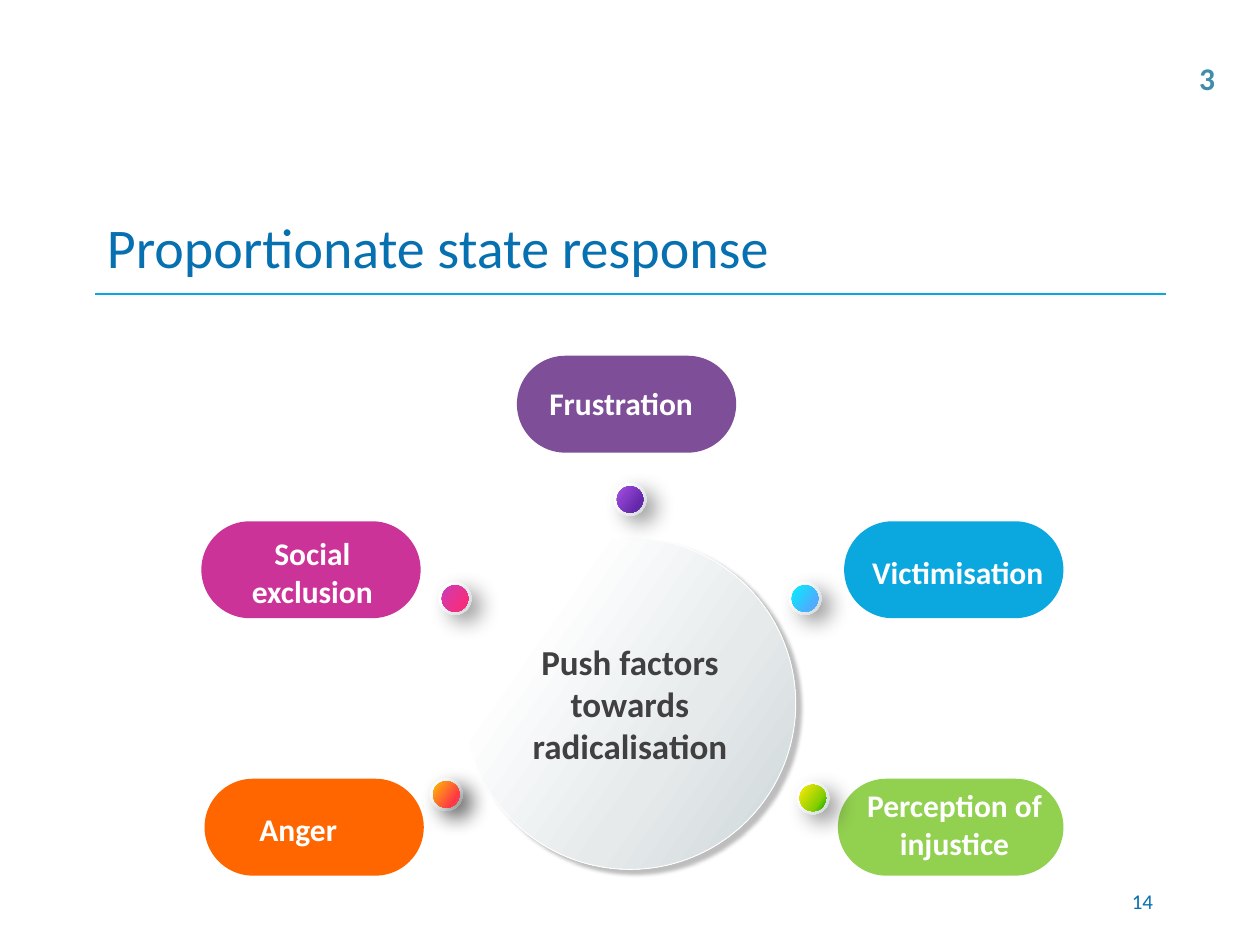
"""Build the slide on push factors towards radicalisation."""
from dataclasses import dataclass
from typing import Optional

import lxml.etree
import pptx
import pptx.dml.color
import pptx.enum.shapes
import pptx.enum.text
import pptx.oxml.ns
import pptx.util

Pt = pptx.util.Pt
RGBColor = pptx.dml.color.RGBColor
Align = pptx.enum.text.PP_ALIGN
Anchor = pptx.enum.text.MSO_ANCHOR
Preset = pptx.enum.shapes.MSO_SHAPE
qn = pptx.oxml.ns.qn

WHITE = RGBColor(0xFF, 0xFF, 0xFF)
BLUE = RGBColor(0x07, 0x70, 0xB1)
CYAN = RGBColor(0x0B, 0xA7, 0xDF)
TEAL = RGBColor(0x3E, 0x8E, 0xA9)
CHARCOAL = RGBColor(0x40, 0x40, 0x40)
ORANGE = RGBColor(0xFF, 0x66, 0x00)
MAGENTA = RGBColor(0xCC, 0x33, 0x99)
PURPLE = RGBColor(0x7E, 0x4E, 0x99)
GREEN = RGBColor(0x92, 0xD0, 0x50)

FONT = "Calibri"
ANGLE = 35
PILL_HEIGHT = 55.4
HALO_SIZE = 18.8
CORE_SIZE = 15.1
LABEL_INSETS = (2.9, 2.9)

Box = tuple[float, float, float, float]
Stops = list[tuple[int, RGBColor]]


@dataclass
class Shadow:
    opacity: int
    blur: float
    distance: float
    angle: int = 39


@dataclass
class Factor:
    label: str
    color: RGBColor
    pill: tuple[float, float, float]
    text_box: Box
    alignment: Align
    dot_center: tuple[float, float]
    dot_stops: Stops
    core_shadow: Optional[Shadow] = None


SILVER: Stops = [(23, WHITE), (63, RGBColor(0xE6, 0xEA, 0xEB)), (100, RGBColor(0xCD, 0xD5, 0xD8))]
DOT_SHADOW = Shadow(38, 12, 7.1)
HUB_SHADOW = Shadow(26, 2, 3.7)

FACTORS = [
    Factor("Anger", ORANGE, (116.9, 445, 125.3), (145.4, 460, 66, 27.4), Align.LEFT, (255, 454),
           [(0, RGBColor(0xFF, 0xC2, 0x03)), (37, RGBColor(0xFF, 0x7D, 0x25)),
            (77, RGBColor(0xFF, 0x38, 0x47))], DOT_SHADOW),
    Factor("Social exclusion", MAGENTA, (115.1, 297.9, 125.3), (120.2, 302.4, 116.6, 49), Align.CENTER,
           (260, 342),
           [(1, RGBColor(0xC2, 0x3F, 0xC6)), (36, RGBColor(0xE1, 0x35, 0x9B)),
            (98, RGBColor(0xFF, 0x2A, 0x70))]),
    Factor("Frustration", PURPLE, (295.4, 203.3, 125.3), (311, 216.7, 97.2, 27.4), Align.LEFT, (360, 285.4),
           [(0, RGBColor(0xA8, 0x52, 0xE6)), (37, RGBColor(0x86, 0x3D, 0xC8)),
            (77, RGBColor(0x64, 0x28, 0xAA))]),
    Factor("Victimisation", CYAN, (482.4, 297.9, 125.3), (495.4, 313.2, 107.3, 27.4), Align.LEFT, (460, 342),
           [(0, RGBColor(0x00, 0xF2, 0xFE)), (37, RGBColor(0x28, 0xCF, 0xFE)),
            (77, RGBColor(0x4F, 0xAC, 0xFE))]),
    Factor("Perception of injustice", GREEN, (478.8, 445, 128.9), (491.8, 446.4, 107.3, 49), Align.CENTER,
           (464.5, 456),
           [(0, RGBColor(0xFF, 0xEA, 0x03)), (71, RGBColor(0x85, 0xCE, 0x02)),
            (98, RGBColor(0x0C, 0xB1, 0x00))]),
]


def add_color(parent, color: RGBColor):
    return lxml.etree.SubElement(parent, qn("a:srgbClr"), val=str(color))


def add_gradient(shape, stops: Stops) -> None:
    properties = shape.element.spPr
    gradient = properties.makeelement(qn("a:gradFill"), {"rotWithShape": "1"})
    stop_list = lxml.etree.SubElement(gradient, qn("a:gsLst"))
    for position, color in stops:
        add_color(lxml.etree.SubElement(stop_list, qn("a:gs"), pos=str(position * 1000)), color)
    lxml.etree.SubElement(gradient, qn("a:lin"), ang=str(ANGLE * 60000), scaled="0")
    properties.find(qn("a:prstGeom")).addnext(gradient)


def add_shadow(shape, shadow: Shadow) -> None:
    effects = shape.element.spPr.find(qn("a:effectLst"))
    outer = lxml.etree.SubElement(
        effects, qn("a:outerShdw"), blurRad=str(Pt(shadow.blur)), dist=str(Pt(shadow.distance)),
        dir=str(shadow.angle * 60000), algn="tl", rotWithShape="0")
    color = add_color(outer, RGBColor(0, 0, 0))
    lxml.etree.SubElement(color, qn("a:alpha"), val=str(shadow.opacity * 1000))


def add_circle(slide, center: tuple[float, float], size: float, stops: Stops, shadow: Optional[Shadow]):
    x, y = center
    shape = slide.shapes.add_shape(Preset.OVAL, Pt(x - size / 2), Pt(y - size / 2), Pt(size), Pt(size))
    shape.shadow.inherit = False
    shape.line.fill.background()
    add_gradient(shape, stops)
    if shadow:
        add_shadow(shape, shadow)
    return shape


def add_pill(slide, factor: Factor) -> None:
    left, top, width = factor.pill
    shape = slide.shapes.add_shape(Preset.ROUNDED_RECTANGLE, Pt(left), Pt(top), Pt(width), Pt(PILL_HEIGHT))
    shape.adjustments[0] = 0.5
    shape.shadow.inherit = False
    shape.fill.solid()
    shape.fill.fore_color.rgb = factor.color
    shape.line.fill.background()


def write_text(shape, text: str, size: float, color: RGBColor, bold: bool = False,
               alignment: Align = Align.LEFT, anchor: Anchor = Anchor.TOP,
               insets: tuple[float, float] = (7.2, 3.6), wrap: bool = True) -> None:
    frame = shape.text_frame
    frame.word_wrap = wrap
    frame.vertical_anchor = anchor
    frame.margin_left = frame.margin_right = Pt(insets[0])
    frame.margin_top = frame.margin_bottom = Pt(insets[1])
    paragraph = frame.paragraphs[0]
    paragraph.text = text
    paragraph.alignment = alignment
    paragraph.font.name = FONT
    paragraph.font.size = Pt(size)
    paragraph.font.bold = bold
    paragraph.font.color.rgb = color


def add_text_box(slide, box: Box):
    return slide.shapes.add_textbox(*(Pt(length) for length in box))


def add_title_rule(slide) -> None:
    rule = slide.shapes.add_connector(
        pptx.enum.shapes.MSO_CONNECTOR.STRAIGHT, Pt(54), Pt(168), Pt(666), Pt(168))
    rule.line.color.rgb = CYAN
    rule.line.width = Pt(0.75)
    lxml.etree.SubElement(rule.element.spPr, qn("a:effectLst"))


def main() -> None:
    presentation = pptx.Presentation()
    presentation.slide_width, presentation.slide_height = Pt(720), Pt(540)
    slide = presentation.slides.add_slide(presentation.slide_layouts[6])

    add_title_rule(slide)
    write_text(add_text_box(slide, (54, 113.8, 612, 54)), "Proportionate state response", 32, BLUE,
               anchor=Anchor.MIDDLE)
    write_text(add_text_box(slide, (516.2, 500.4, 149.8, 28.8)), "14", 12, BLUE,
               alignment=Align.RIGHT, anchor=Anchor.MIDDLE)
    write_text(add_text_box(slide, (678.2, 30.2, 23.8, 28.8)), "3", 18, TEAL, bold=True, wrap=False)

    hub = add_circle(slide, (360, 402.1), 189.4, SILVER, HUB_SHADOW)
    hub.line.color.rgb = WHITE
    hub.line.width = Pt(0.5)
    write_text(hub, "Push factors towards radicalisation", 20, CHARCOAL, bold=True,
               alignment=Align.CENTER, anchor=Anchor.MIDDLE, insets=(2.9, 3.6))

    for factor in FACTORS:
        add_pill(slide, factor)
        add_circle(slide, factor.dot_center, HALO_SIZE, SILVER, DOT_SHADOW)
        add_circle(slide, factor.dot_center, CORE_SIZE, factor.dot_stops, factor.core_shadow)
        write_text(add_text_box(slide, factor.text_box), factor.label, 18, WHITE, bold=True,
                   alignment=factor.alignment, insets=LABEL_INSETS)

    presentation.save("out.pptx")


if __name__ == "__main__":
    main()
